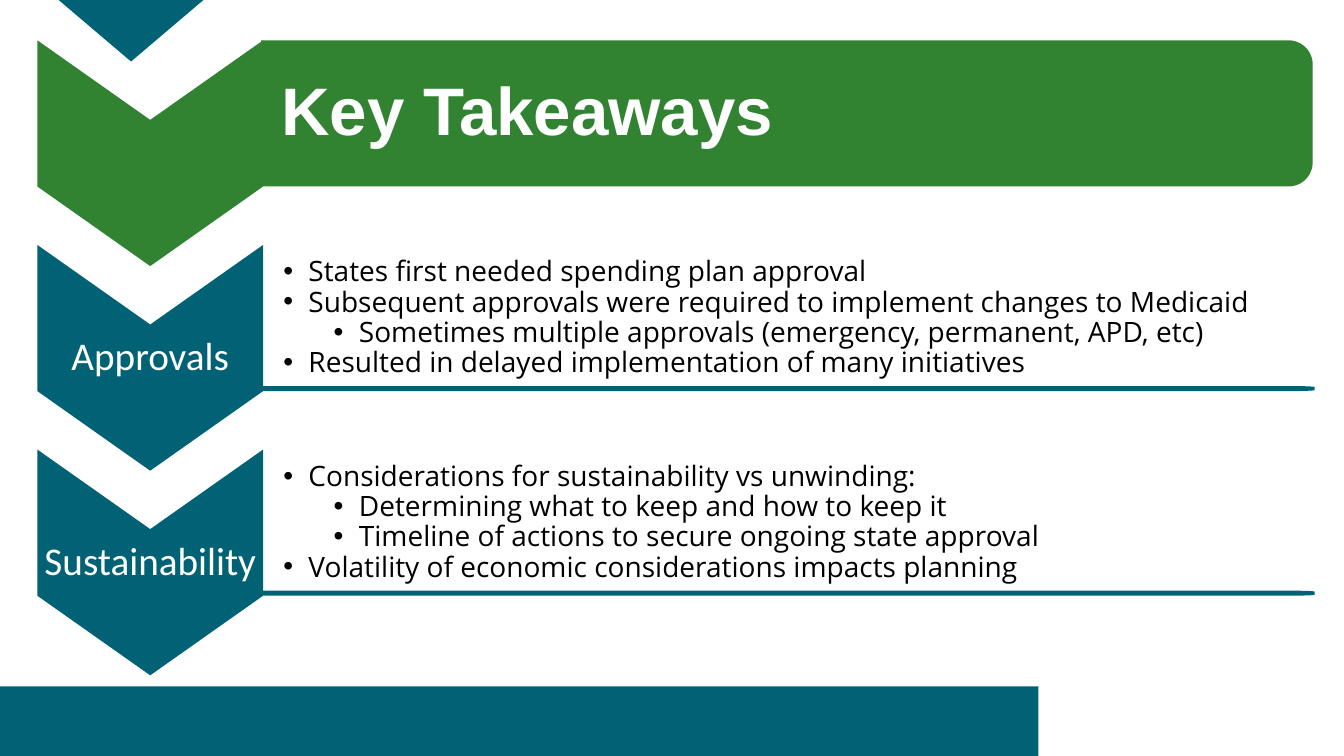
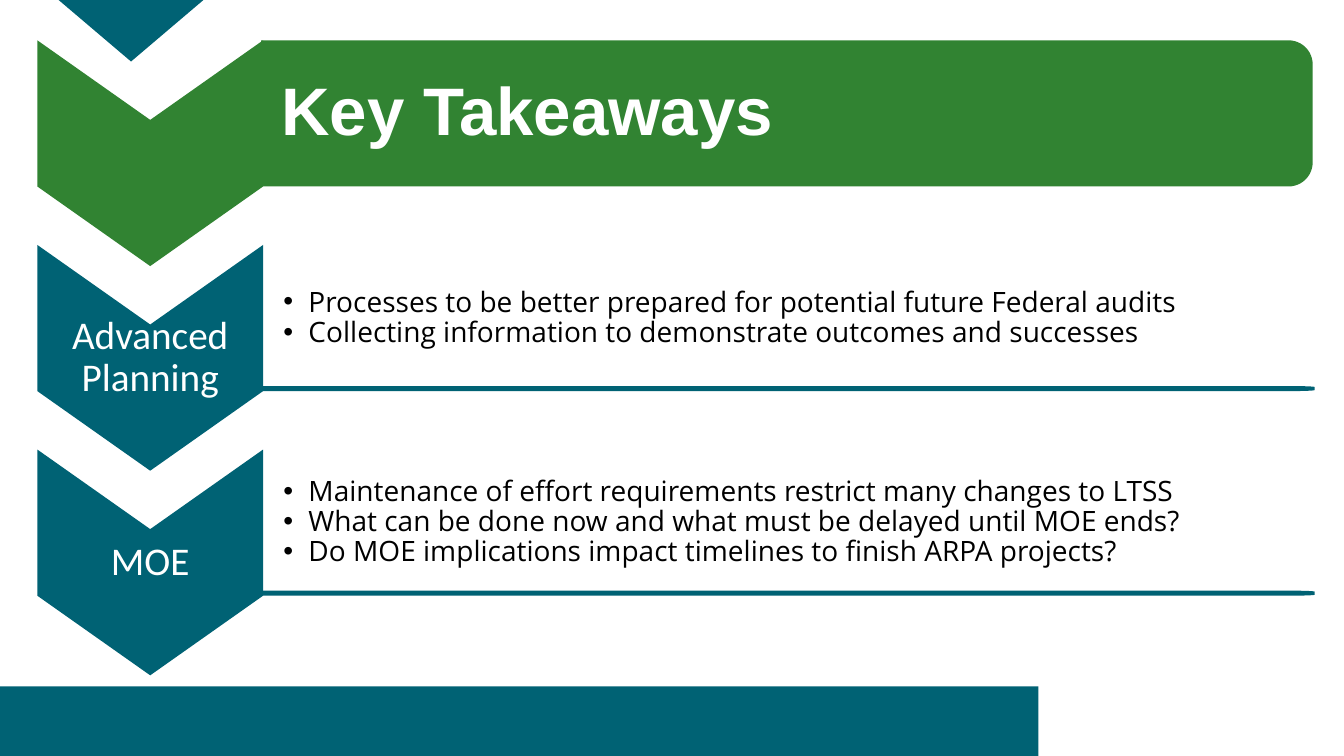
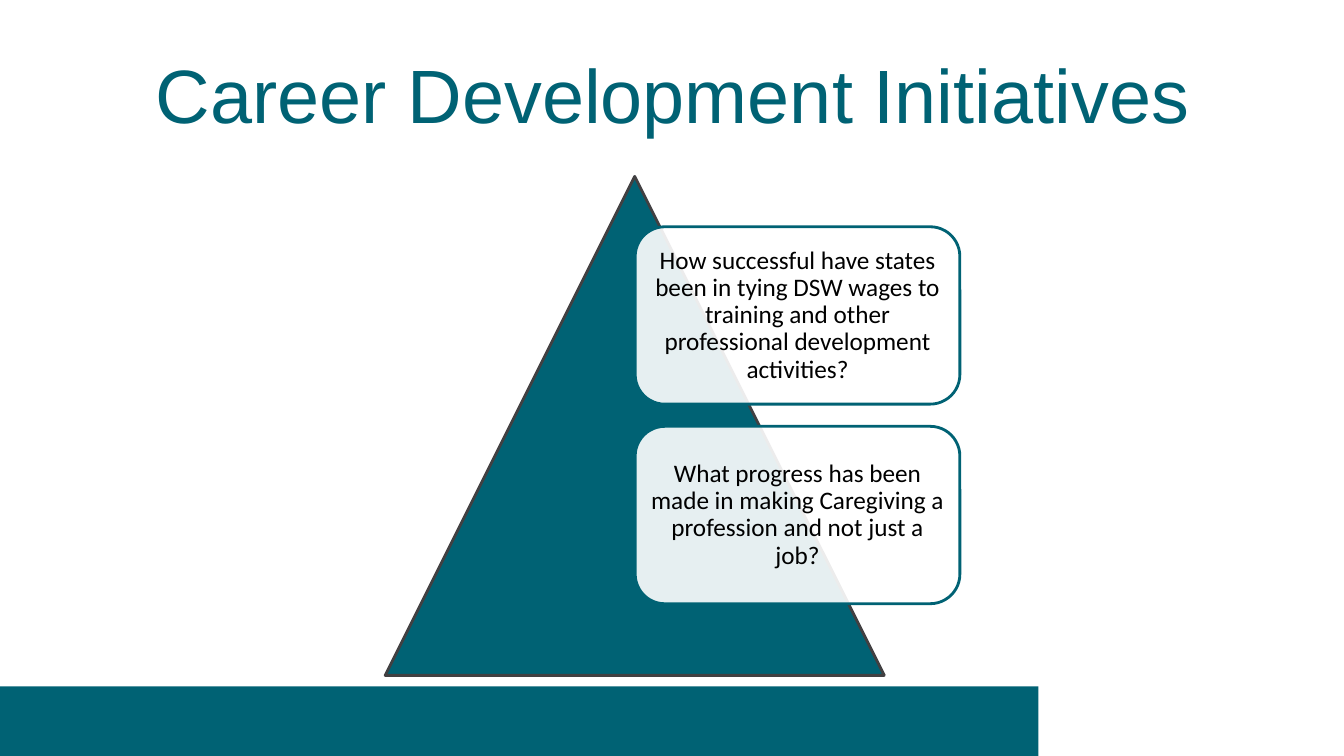
from math import cos, pi, sin

from lxml.etree import SubElement
from pptx import Presentation
from pptx.dml.color import RGBColor
from pptx.enum.shapes import MSO_SHAPE
from pptx.enum.text import MSO_ANCHOR, PP_ALIGN
from pptx.oxml.ns import qn
from pptx.util import Pt

EMU_PER_PX = 9144  # 100 px to the inch
SLIDE_WIDTH, SLIDE_HEIGHT = 1333, 750

COLORS = {
    "teal": "006274",
    "green": "318332",
    "outline": "414042",
    "white": "FFFFFF",
    "black": "000000",
}

# Each takeaway row: chevron label, then (bullet level, text) pairs
TAKEAWAY_SLIDES = [
    [
        ("Approvals", [
            (1, "States first needed spending plan approval"),
            (1, "Subsequent approvals were required to implement changes to Medicaid"),
            (2, "Sometimes multiple approvals (emergency, permanent, APD, etc)"),
            (1, "Resulted in delayed implementation of many initiatives"),
        ]),
        ("Sustainability", [
            (1, "Considerations for sustainability vs unwinding:"),
            (2, "Determining what to keep and how to keep it"),
            (2, "Timeline of actions to secure ongoing state approval"),
            (1, "Volatility of economic considerations impacts planning"),
        ]),
    ],
    [
        ("Advanced Planning", [
            (1, "Processes to be better prepared for potential future Federal audits"),
            (1, "Collecting information to demonstrate outcomes and successes"),
        ]),
        ("MOE", [
            (1, "Maintenance of effort requirements restrict many changes to LTSS"),
            (1, "What can be done now and what must be delayed until MOE ends?"),
            (1, "Do MOE implications impact timelines to finish ARPA projects?"),
        ]),
    ],
]
TAKEAWAY_TITLE = "Key Takeaways"
CAREER_TITLE = "Career Development Initiatives"
CAREER_QUESTIONS = [
    "How successful have states been in tying DSW wages to training and other "
    "professional development activities?",
    "What progress has been made in making Caregiving a profession and not just a job?",
]

FOOTER = (0, 681, 1030, 69)

CHEVRON_LEFT, CHEVRON_WIDTH = 37, 224
BODY_HEIGHT, POINT_DEPTH = 145, 79
FIRST_TOP, ROW_PITCH = 40, 203
PANEL_LEFT = CHEVRON_LEFT + CHEVRON_WIDTH
PANEL_WIDTH, BAR_WIDTH, BAR_HEIGHT = 1006, 1043, 5
CORNER = 24

TRIANGLE = (382, 175, 495, 495)
CARD_LEFT, CARD_TOP, CARD_WIDTH, CARD_HEIGHT = 630, 225, 322, 176
CARD_GAP = 22


def px(*lengths):
    return [round(length * EMU_PER_PX) for length in lengths]


def rgb(color):
    return RGBColor.from_string(COLORS[color])


def paint(shape, fill, line=None):
    shape.shadow.inherit = False
    shape.fill.solid()
    shape.fill.fore_color.rgb = rgb(fill)
    if line:
        shape.line.color.rgb = rgb(line)
        shape.line.width = Pt(2)
    else:
        shape.line.fill.background()
    return shape


def add_box(slide, kind, box, fill, line=None):
    return paint(slide.shapes.add_shape(kind, *px(*box)), fill, line)


def add_outline(slide, points, fill):
    corners = [px(*point) for point in points]
    builder = slide.shapes.build_freeform(*corners[0])
    builder.add_line_segments(corners[1:], close=True)
    return paint(builder.convert_to_shape(), fill)


def add_chevron(slide, top, fill, width=CHEVRON_WIDTH):
    left, right = CHEVRON_LEFT, CHEVRON_LEFT + width
    middle, bottom = left + width / 2, top + BODY_HEIGHT
    return add_outline(slide, [
        (left, top), (middle, top + POINT_DEPTH), (right, top),
        (right, bottom), (middle, bottom + POINT_DEPTH), (left, bottom),
    ], fill)


def add_right_rounded(slide, left, top, width, height, radius_y, fill):
    """Bar whose two right corners are elliptical arcs."""
    center_x = left + width - CORNER
    points = [(left, top)]
    for center_y, start in ((top + radius_y, -pi / 2), (top + height - radius_y, 0)):
        for step in range(13):
            angle = start + step * pi / 24
            points.append((center_x + CORNER * cos(angle), center_y + radius_y * sin(angle)))
    points.append((left, top + height))
    return add_outline(slide, points, fill)


def style_paragraph(paragraph, font, size, color, align, bold=False, spacing=0.9):
    paragraph.alignment = align
    paragraph.line_spacing = spacing
    for run in paragraph.runs:
        run.font.name = font
        run.font.size = Pt(size)
        run.font.bold = bold
        run.font.color.rgb = rgb(color)


def prepare_frame(shape, insets):
    frame = shape.text_frame
    frame.word_wrap = True
    frame.vertical_anchor = MSO_ANCHOR.MIDDLE
    (frame.margin_left, frame.margin_top,
     frame.margin_right, frame.margin_bottom) = px(*insets)
    return frame


def write(shape, text, insets, font, size, color, align=PP_ALIGN.CENTER, **style):
    frame = prepare_frame(shape, insets)
    frame.text = text
    style_paragraph(frame.paragraphs[0], font, size, color, align, **style)


def add_bullets(slide, top, bullets):
    box = slide.shapes.add_textbox(*px(PANEL_LEFT, top, PANEL_WIDTH, BODY_HEIGHT))
    frame = prepare_frame(box, (20, 9, 9, 9))
    frame.text = "\n".join(text for _, text in bullets)
    for paragraph, (level, _) in zip(frame.paragraphs, bullets):
        paragraph.level = level
        margin, hanging = px(25 + 50 * (level - 1), -25)
        properties = paragraph._p.get_or_add_pPr()
        properties.set("marL", str(margin))
        properties.set("indent", str(hanging))
        SubElement(properties, qn("a:buFont")).set("typeface", "Arial")
        SubElement(properties, qn("a:buChar")).set("char", "•")
        style_paragraph(paragraph, "Open Sans", 20, "black", PP_ALIGN.LEFT)


def add_footer_to_layout(layout, slide):
    """Draw the footer band on a slide, then move it to the layout all slides use."""
    for placeholder in list(layout.placeholders):
        layout.shapes.element.remove(placeholder.element)
    band = add_box(slide, MSO_SHAPE.RECTANGLE, FOOTER, "teal")
    layout.shapes.element.append(band.element)


def build_takeaways(slide, rows):
    add_chevron(slide, FIRST_TOP, "green")
    banner = add_right_rounded(slide, PANEL_LEFT - 2, FIRST_TOP, BAR_WIDTH, BODY_HEIGHT,
                               CORNER, "green")
    write(banner, TAKEAWAY_TITLE, (20, 9, 9, 9), "Arial", 48, "white",
          PP_ALIGN.LEFT, bold=True)
    for index, (label, bullets) in enumerate(rows, start=1):
        top = FIRST_TOP + index * ROW_PITCH
        chevron = add_chevron(slide, top, "teal")
        write(chevron, label, (1, 80, 1, 80), "Calibri", 28, "white")
        add_bullets(slide, top, bullets)
        add_right_rounded(slide, PANEL_LEFT, top + BODY_HEIGHT - BAR_HEIGHT,
                          BAR_WIDTH, BAR_HEIGHT, 1, "teal")
    add_chevron(slide, FIRST_TOP - ROW_PITCH, "teal", width=186)


def build_career(slide):
    title = slide.shapes.add_textbox(*px(67, 30, 1200, 125))
    write(title, CAREER_TITLE, (10, 5, 10, 5), "Arial", 54, "teal", spacing=1.0)
    add_box(slide, MSO_SHAPE.ISOSCELES_TRIANGLE, TRIANGLE, "teal", "outline")
    for index, question in enumerate(CAREER_QUESTIONS):
        top = CARD_TOP + index * (CARD_HEIGHT + CARD_GAP)
        card = add_box(slide, MSO_SHAPE.ROUNDED_RECTANGLE,
                       (CARD_LEFT, top, CARD_WIDTH, CARD_HEIGHT), "white", "teal")
        fill_color = card.element.spPr.find(qn("a:solidFill")).find(qn("a:srgbClr"))
        SubElement(fill_color, qn("a:alpha")).set("val", "90000")
        write(card, question, (7, 7, 7, 7), "Calibri", 18, "black")


def main():
    presentation = Presentation()
    presentation.slide_width, presentation.slide_height = px(SLIDE_WIDTH, SLIDE_HEIGHT)
    blank = presentation.slide_layouts[6]
    slides = [presentation.slides.add_slide(blank) for _ in range(len(TAKEAWAY_SLIDES) + 1)]
    add_footer_to_layout(blank, slides[0])
    for slide, rows in zip(slides, TAKEAWAY_SLIDES):
        build_takeaways(slide, rows)
    build_career(slides[-1])
    presentation.save("out.pptx")


if __name__ == "__main__":
    main()
